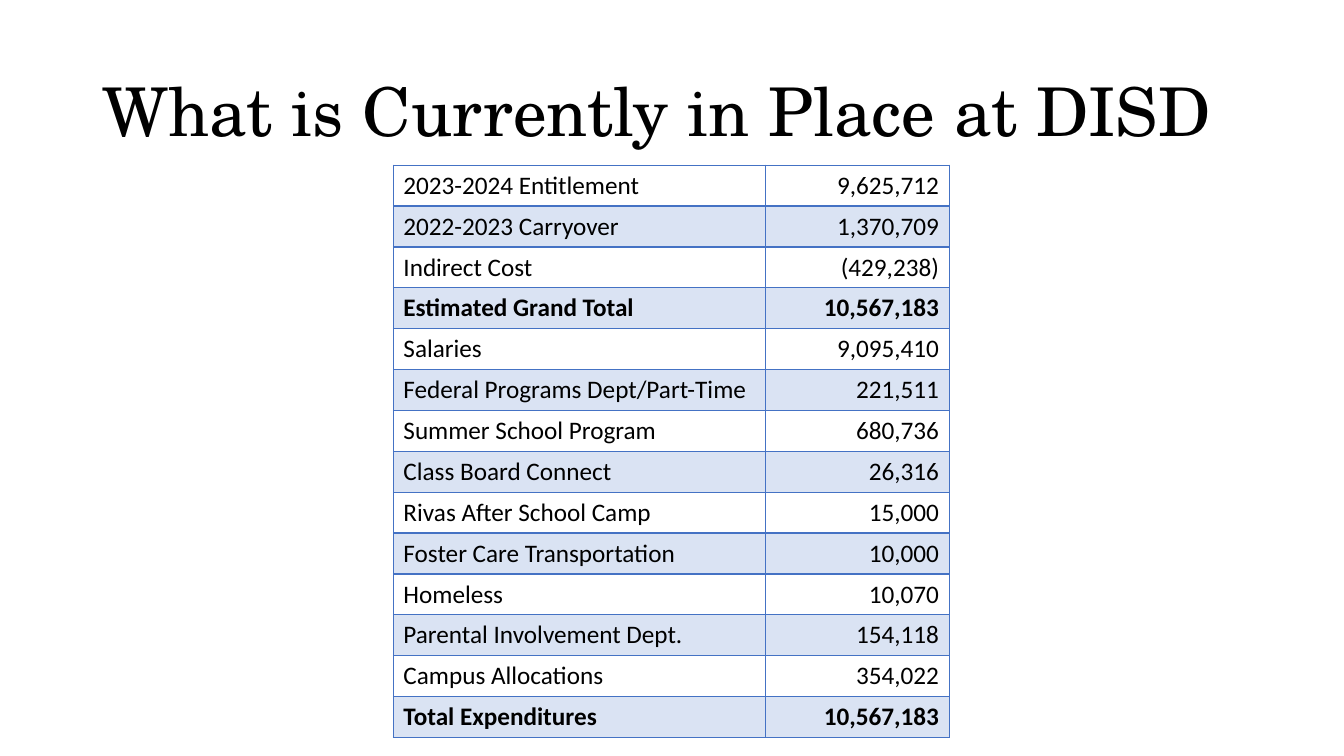
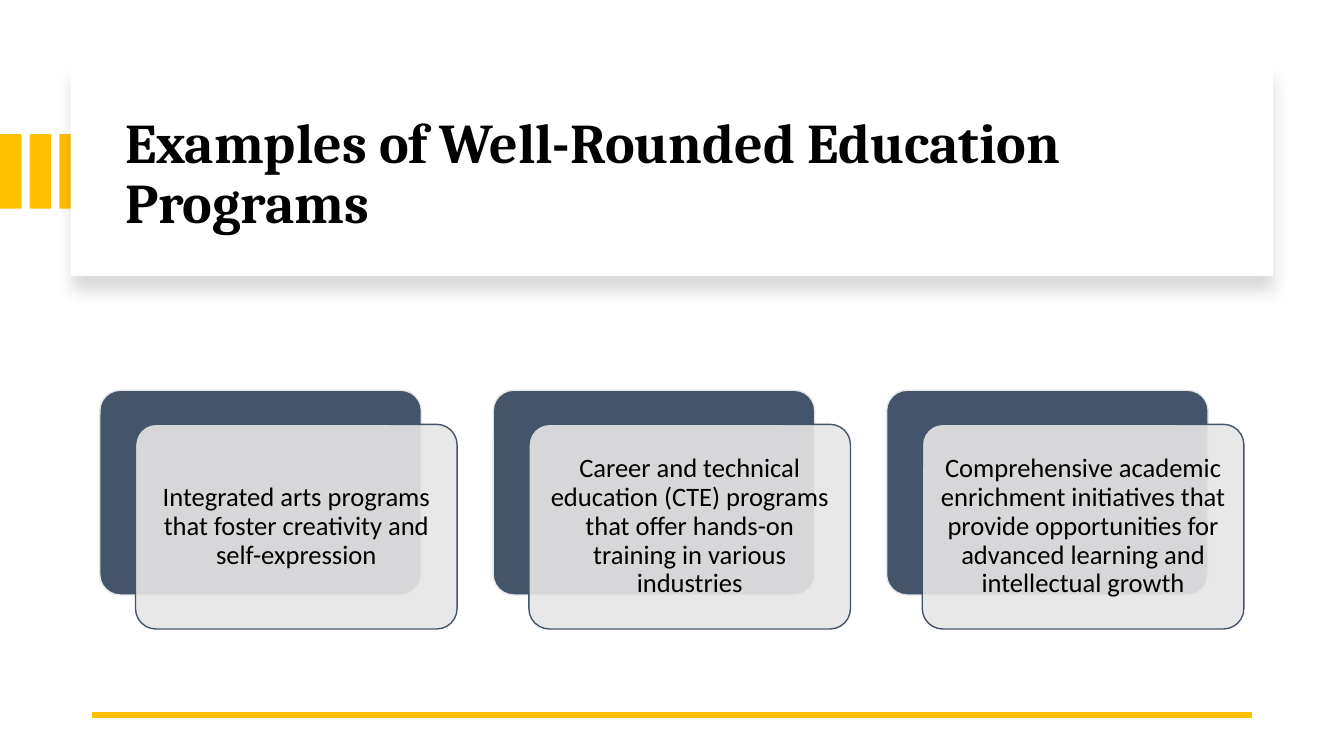
from lxml import etree
from pptx import Presentation
from pptx.dml.color import RGBColor
from pptx.enum.shapes import MSO_CONNECTOR, MSO_SHAPE
from pptx.enum.text import MSO_ANCHOR, MSO_AUTO_SIZE, PP_ALIGN
from pptx.oxml import parse_xml
from pptx.oxml.ns import nsdecls, qn
from pptx.util import Pt

RECTANGLE, ROUNDED = MSO_SHAPE.RECTANGLE, MSO_SHAPE.ROUNDED_RECTANGLE
STRAIGHT = MSO_CONNECTOR.STRAIGHT
LEFT, CENTER, RIGHT = PP_ALIGN.LEFT, PP_ALIGN.CENTER, PP_ALIGN.RIGHT
MIDDLE, NO_AUTOFIT = MSO_ANCHOR.MIDDLE, MSO_AUTO_SIZE.NONE
TITLE_ONLY = 5

BLACK, WHITE, GOLD = "000000", "FFFFFF", "FFC000"
SLATE, SILVER = "44546A", "E7E6E6"
BLUE, PALE_BLUE = "4472C4", "DAE3F3"
BODY_FONT = "Calibri"

BUDGET = [
    ("2023-2024 Entitlement", "9,625,712"),
    ("2022-2023 Carryover", "1,370,709"),
    ("Indirect Cost", "(429,238)"),
    ("Estimated Grand Total", "10,567,183"),
    ("Salaries", "9,095,410"),
    ("Federal Programs Dept/Part-Time", "221,511"),
    ("Summer School Program", "680,736"),
    ("Class Board Connect", "26,316"),
    ("Rivas After School Camp", "15,000"),
    ("Foster Care Transportation", "10,000"),
    ("Homeless", "10,070"),
    ("Parental Involvement Dept.", "154,118"),
    ("Campus Allocations", "354,022"),
    ("Total Expenditures", "10,567,183"),
]
PROGRAMS = [
    "Integrated arts programs that foster creativity and self-expression",
    "Career and technical education (CTE) programs that offer hands-on training in various industries",
    "Comprehensive academic enrichment initiatives that provide opportunities for advanced learning "
    "and intellectual growth",
]


def color(value):
    """Turn a hex string into a colour."""
    return RGBColor.from_string(value)


def format_paragraph(paragraph, font_name, size, alignment, bold=False):
    """Set the font and alignment of a whole paragraph."""
    paragraph.alignment = alignment
    font = paragraph.font
    font.name, font.size, font.bold = font_name, Pt(size), bold
    font.color.rgb = color(BLACK)


def set_title(slide, text, box, font_name, size, bold=False):
    """Fill and place the title placeholder, in front of what is drawn so far."""
    title = slide.shapes.title
    title.left, title.top, title.width, title.height = map(Pt, box)
    frame = title.text_frame
    frame.text = text
    frame.auto_size, frame.vertical_anchor = NO_AUTOFIT, MIDDLE
    frame.paragraphs[0].line_spacing = 0.9
    format_paragraph(frame.paragraphs[0], font_name, size, LEFT, bold)
    slide.shapes.element.append(title.element)


def add_box(slide, kind, box, fill, line=None):
    """Add a filled preset shape without a shadow."""
    shape = slide.shapes.add_shape(kind, *map(Pt, box))
    shape.shadow.inherit = False
    shape.fill.solid()
    shape.fill.fore_color.rgb = color(fill)
    if line:
        shape.line.color.rgb = color(line)
        shape.line.width = Pt(1)
    else:
        shape.line.fill.background()
    return shape


def set_opacity(shape, percent):
    """Make the solid fill of a shape partly transparent."""
    solid = shape.element.spPr.find(qn("a:solidFill"))
    etree.SubElement(solid[0], qn("a:alpha"), val=str(percent * 1000))


def add_soft_shadow(shape):
    """Cast a soft shadow below a shape."""
    effects = shape.element.spPr.find(qn("a:effectLst"))
    effects.append(parse_xml(
        f'<a:outerShdw {nsdecls("a")} blurRad="{Pt(11)}" dist="{Pt(10)}" dir="5400000" '
        f'algn="t" rotWithShape="0"><a:srgbClr val="{BLACK}"><a:alpha val="15000"/>'
        '</a:srgbClr></a:outerShdw>'))


def add_rule(slide, left, right, top):
    """Add a thick gold horizontal line."""
    rule = slide.shapes.add_connector(STRAIGHT, Pt(left), Pt(top), Pt(right), Pt(top))
    rule.line.color.rgb = color(GOLD)
    rule.line.width = Pt(4.5)
    etree.SubElement(rule.element.spPr, qn("a:effectLst"))


def set_borders(cell, bottom_width):
    """Draw blue borders on all four sides of a cell."""
    properties = cell._tc.get_or_add_tcPr()
    for side, width in (("L", 1), ("R", 1), ("T", 1), ("B", bottom_width)):
        properties.append(parse_xml(
            f'<a:ln{side} {nsdecls("a")} w="{Pt(width)}"><a:solidFill>'
            f'<a:srgbClr val="{BLUE}"/></a:solidFill></a:ln{side}>'))


def add_budget_table(slide, left, top, column_widths, row_height):
    """Add the banded budget table with bold totals."""
    table = slide.shapes.add_table(
        len(BUDGET), len(column_widths), Pt(left), Pt(top),
        Pt(sum(column_widths)), Pt(row_height * len(BUDGET))).table
    table.first_row = table.horz_banding = False
    for column, width in zip(table.columns, column_widths):
        column.width = Pt(width)
    for row_index, entry in enumerate(BUDGET):
        table.rows[row_index].height = Pt(row_height)
        for column_index, (text, alignment) in enumerate(zip(entry, (LEFT, RIGHT))):
            cell = table.cell(row_index, column_index)
            cell.text = text
            format_paragraph(cell.text_frame.paragraphs[0], BODY_FONT, 18, alignment,
                             "Total" in entry[0])
            set_borders(cell, 2 if row_index == 0 else 1)
            if row_index % 2:
                cell.fill.solid()
                cell.fill.fore_color.rgb = color(PALE_BLUE)
            else:
                cell.fill.background()


def add_program_card(slide, left, top, text):
    """Add a dark card with a translucent text card overlapping it."""
    width, height = 229.7, 146.2
    back = add_box(slide, ROUNDED, (left, top, width, height), SLATE, SILVER)
    front = add_box(slide, ROUNDED, (left + 25.5, top + 24.3, width, height), SILVER, SLATE)
    set_opacity(front, 90)
    for card in (back, front):
        card.adjustments[0] = 0.1
    frame = front.text_frame
    frame.word_wrap, frame.vertical_anchor = True, MIDDLE
    frame.margin_left = frame.margin_right = frame.margin_top = frame.margin_bottom = Pt(5.8)
    frame.text = text
    frame.paragraphs[0].line_spacing = 0.9
    format_paragraph(frame.paragraphs[0], BODY_FONT, 19, CENTER)


def build_budget_slide(slide):
    """Build the slide with the budget table."""
    set_title(slide, "What is Currently in Place at DISD", (66, 29, 827.5, 106),
              "TeX Gyre Schola", 48)
    add_budget_table(slide, 281, 118, (266, 131), 29.2)


def build_programs_slide(slide):
    """Build the slide with the three program cards."""
    for index in range(3):
        add_box(slide, RECTANGLE, (index * 21.2, 95.8, 15.3, 53.3), GOLD)
    banner = add_box(slide, RECTANGLE, (50.4, 48.2, 859, 149), WHITE)
    add_soft_shadow(banner)
    set_title(slide, "Examples of Well-Rounded Education Programs", (82.1, 64, 801.4, 122.4),
              "Cambria", 40, bold=True)
    add_rule(slide, 66, 894, 510.5)
    for index, text in enumerate(PROGRAMS):
        add_program_card(slide, 71.3 + index * 281, 278.8, text)


def main():
    """Build and save the presentation."""
    presentation = Presentation()
    presentation.slide_width, presentation.slide_height = Pt(960), Pt(540)
    layout = presentation.slide_layouts[TITLE_ONLY]
    for build in (build_budget_slide, build_programs_slide):
        build(presentation.slides.add_slide(layout))
    presentation.save("out.pptx")


if __name__ == "__main__":
    main()
